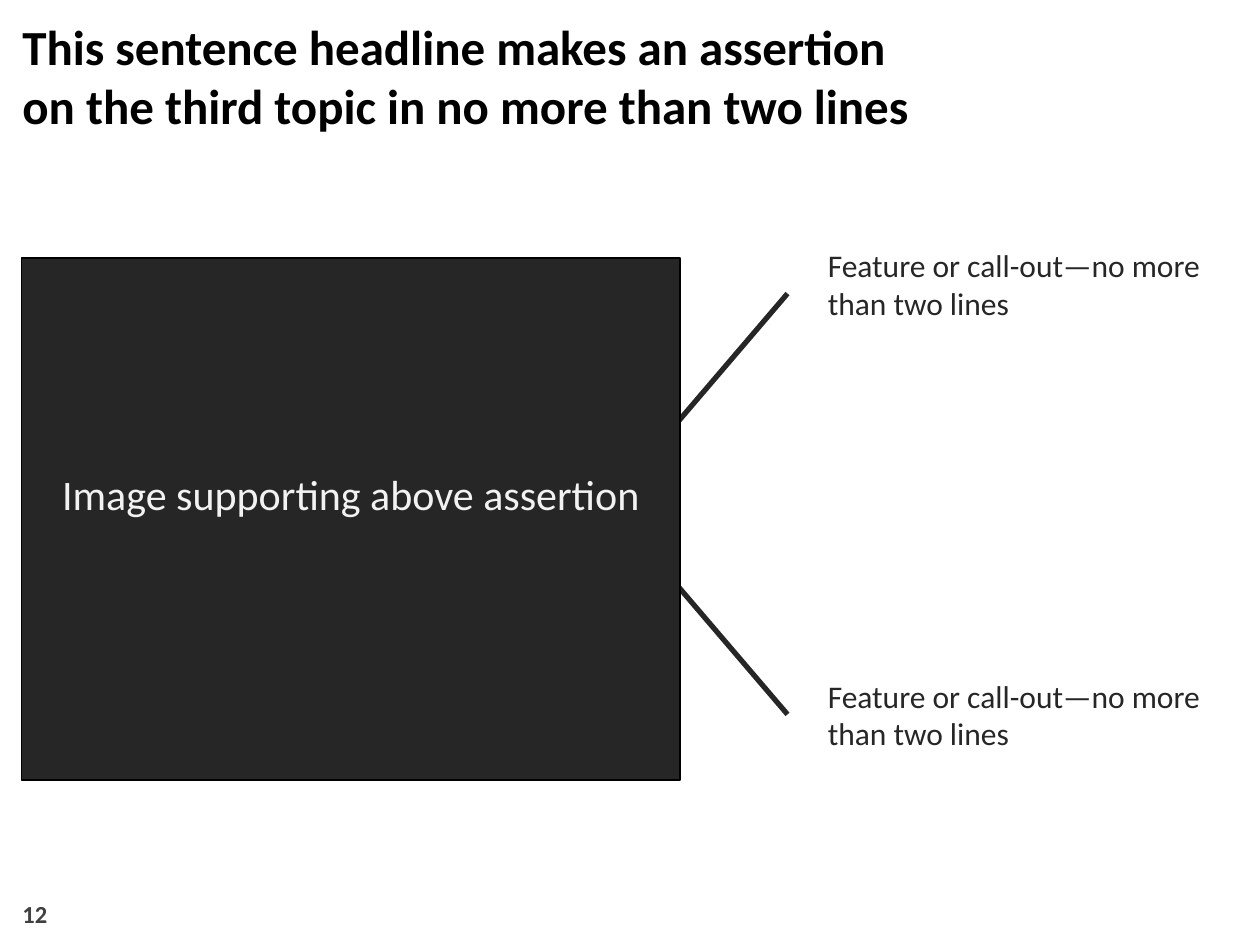
from pptx import Presentation
from pptx import util as u
from pptx.dml.color import RGBColor
from pptx.enum import shapes, text
from pptx.oxml.ns import qn
from lxml import etree

DARK = "262626"


def rgb(value):
    """Turn a hex string into a colour."""
    return RGBColor.from_string(value)


def write(sp, lines, size, color, bold=False, anchor=text.MSO_ANCHOR.TOP,
          align=text.PP_ALIGN.LEFT, inset=(0.1, 0.05, 0.1, 0.05)):
    """Fill a shape with one paragraph, broken into the given lines."""
    tf = sp.text_frame
    tf.word_wrap = True
    tf.vertical_anchor = anchor
    tf.margin_left, tf.margin_top, tf.margin_right, tf.margin_bottom = map(u.Inches, inset)
    p = tf.paragraphs[0]
    p.alignment = align
    for i, line in enumerate(lines):
        if i:
            p.add_line_break()
        r = p.add_run()
        r.text = line
        r.font.name = "Calibri"
        r.font.size = u.Pt(size)
        r.font.bold = bold
        r.font.color.rgb = rgb(color)


def add_label(s, box, lines, size, color, **style):
    """Add a text box."""
    sp = s.shapes.add_textbox(*map(u.Inches, box))
    write(sp, lines, size, color, **style)


def add_panel(s, box, caption):
    """Add the dark panel with its caption a little above the middle."""
    sp = s.shapes.add_shape(shapes.MSO_SHAPE.RECTANGLE, *map(u.Inches, box))
    sp.shadow.inherit = False
    sp.fill.solid()
    sp.fill.fore_color.rgb = rgb(DARK)
    sp.line.color.rgb = rgb("000000")
    sp.line.width = u.Pt(1)
    write(sp, [caption], 24, "F2F2F2", anchor=text.MSO_ANCHOR.MIDDLE,
          align=text.PP_ALIGN.CENTER, inset=(0.1, 0.05, 0.1, 0.45))


def add_leader(s, start, end):
    """Add a thick straight line from the panel to a call-out."""
    ln = s.shapes.add_connector(shapes.MSO_CONNECTOR.STRAIGHT, *map(u.Inches, start + end))
    ln.line.color.rgb = rgb(DARK)
    ln.line.width = u.Pt(3)
    etree.SubElement(ln._element.spPr, qn("a:effectLst"))


def main():
    """Build the slide."""
    prs = Presentation()
    prs.slide_width, prs.slide_height = u.Inches(10), u.Inches(7.5)
    s = prs.slides.add_slide(prs.slide_layouts[6])
    for start_y, end_y in ((4.5, 5.67), (3.5, 2.33)):
        add_leader(s, (5.25, start_y), (6.25, end_y))
    add_panel(s, (0.17, 2.05, 5.23, 4.14), "Image supporting above assertion")
    add_label(s, (0.08, 0.08, 9.84, 1.03),
              ["This sentence headline makes an assertion ",
               "on the third topic in no more than two lines"], 28, "000000", bold=True)
    for top in (1.92, 5.34):
        add_label(s, (6.5, top, 3.33, 0.72), ["Feature or call-out—no more than two lines"],
                  18, DARK, inset=(0.07, 0.03, 0.07, 0.03))
    add_label(s, (0.08, 7.02, 2.33, 0.4), ["12"], 14, "404040", bold=True,
              anchor=text.MSO_ANCHOR.BOTTOM)
    prs.save("out.pptx")


if __name__ == "__main__":
    main()
